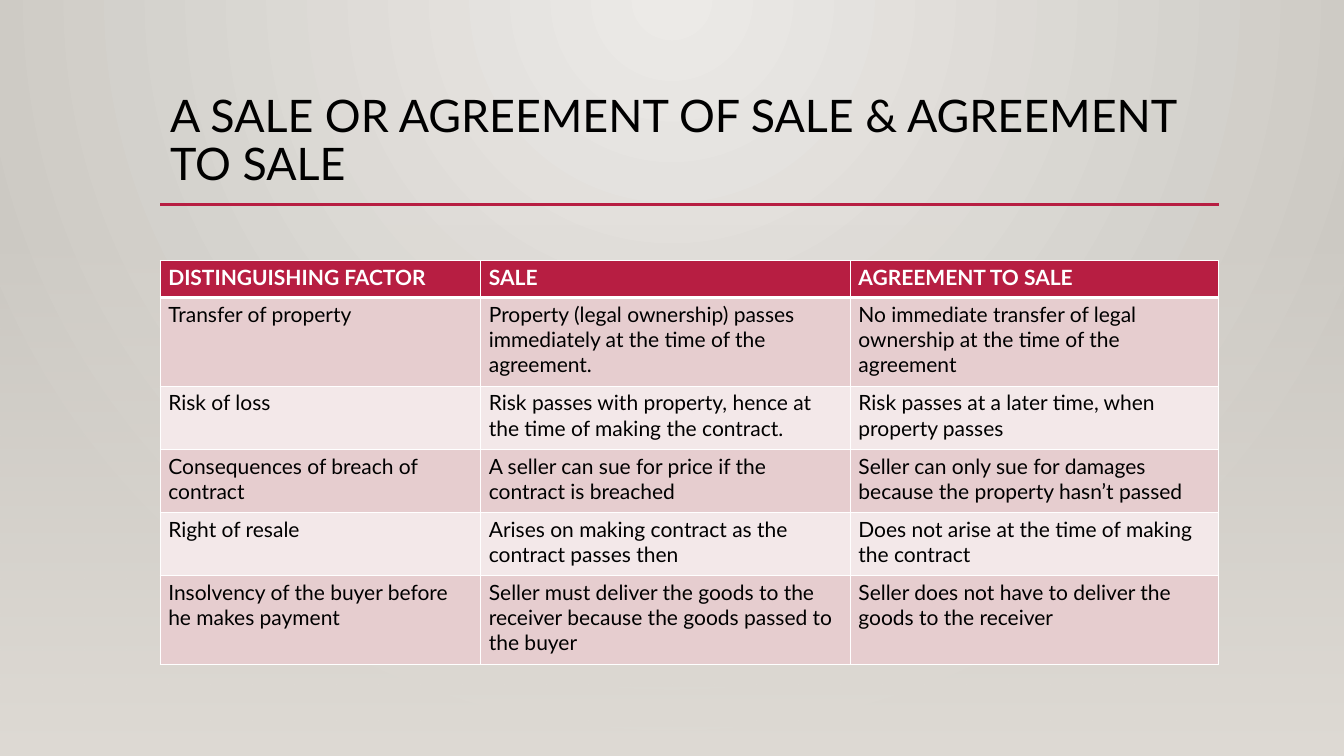
from dataclasses import dataclass
from typing import Any

import lxml.etree
import pptx
import pptx.dml.color
import pptx.enum.shapes
import pptx.enum.text
import pptx.oxml
import pptx.oxml.ns
import pptx.util

Pt = pptx.util.Pt
RGB = pptx.dml.color.RGBColor.from_string
NS = 'xmlns:a="http://schemas.openxmlformats.org/drawingml/2006/main"'


@dataclass(frozen=True)
class Theme:
    font: str = "Lato"
    title_size: float = 32
    table_size: float = 15
    accent: str = "B71E42"
    text: str = "000000"
    white: str = "FFFFFF"
    bands: tuple[str, str] = ("E6CDCF", "F3E8E9")
    glow: str = "ECEAE7"
    edge: str = "CAC7C1"
    floor: str = "DFDBD5"


@dataclass(frozen=True)
class Box:
    x: float
    y: float
    w: float
    h: float

    def pts(self) -> list[int]:
        return [Pt(v) for v in (self.x, self.y, self.w, self.h)]


@dataclass(frozen=True)
class Panel:
    box: Box
    gradient: str


@dataclass(frozen=True)
class Row:
    height: float
    cells: tuple[str, str, str]


T = Theme()
RADIAL = (
    f'<a:gradFill {NS} rotWithShape="1"><a:gsLst>'
    f'<a:gs pos="0"><a:srgbClr val="{T.glow}"/></a:gs>'
    f'<a:gs pos="100000"><a:srgbClr val="{T.edge}"/></a:gs></a:gsLst>'
    '<a:path path="circle"><a:fillToRect l="43000" r="43000" b="100000"/></a:path></a:gradFill>'
)
FADE = (
    f'<a:gradFill {NS} rotWithShape="1"><a:gsLst>'
    f'<a:gs pos="0"><a:srgbClr val="{T.floor}"><a:alpha val="0"/></a:srgbClr></a:gs>'
    f'<a:gs pos="100000"><a:srgbClr val="{T.floor}"/></a:gs></a:gsLst>'
    '<a:lin ang="5400000" scaled="0"/></a:gradFill>'
)

WIDTH, HEIGHT = 960, 540
LEFT, CONTENT_W = 114.5, 756
RULE_Y, RULE_WEIGHT = 146, 2.5
BACKDROP = Panel(Box(0, 0, WIDTH, HEIGHT), RADIAL)
FLOOR = Panel(Box(0, 159, WIDTH, HEIGHT - 159), FADE)
TITLE_BOX = Box(LEFT, 63.4, CONTENT_W, 82.6)
TITLE = "A SALE OR AGREEMENT OF SALE & AGREEMENT TO SALE"
TABLE_Y = 186
COLUMNS = (229, 264, 263)
ROWS = (
    Row(26.5, ("DISTINGUISHING FACTOR", "SALE", "AGREEMENT TO SALE")),
    Row(63.3, ("Transfer of property",
               "Property (legal ownership) passes immediately at the time of the agreement.",
               "No immediate transfer of legal ownership at the time of the agreement")),
    Row(45.2, ("Risk of loss",
               "Risk passes with property, hence at the time of making the contract.",
               "Risk passes at a later time, when property passes")),
    Row(45.2, ("Consequences of breach of contract",
               "A seller can sue for price if the contract is breached",
               "Seller can only sue for damages because the property hasn’t passed")),
    Row(45.2, ("Right of resale",
               "Arises on making contract as the contract passes then",
               "Does not arise at the time of making the contract")),
    Row(63.3, ("Insolvency of the buyer before he makes payment",
               "Seller must deliver the goods to the receiver because the goods passed to the buyer",
               "Seller does not have to deliver the goods to the receiver")),
)
CELL_FORMAT = {"margin_left": Pt(5.75), "margin_right": Pt(5.75),
               "margin_top": Pt(2.9), "margin_bottom": Pt(2.9)}


def apply(target: Any, values: dict[str, Any]) -> None:
    for name, value in values.items():
        setattr(target, name, value)


def write(p: Any, text: str, size: float, color: str, bold: bool = False) -> None:
    r = p.add_run()
    r.text = text
    apply(r.font, {"name": T.font, "size": Pt(size), "bold": bold})
    r.font.color.rgb = RGB(color)


def set_gradient(props: Any, fill: Any, gradient: str) -> None:
    fill.solid()
    old = props.find(pptx.oxml.ns.qn("a:solidFill"))
    props.replace(old, pptx.oxml.parse_xml(gradient))


def add_background(s: Any, gradient: str) -> None:
    fill = s.background.fill
    bg_pr = s.element.find(".//" + pptx.oxml.ns.qn("p:bgPr"))
    set_gradient(bg_pr, fill, gradient)


def add_panel(s: Any, panel: Panel) -> None:
    sp = s.shapes.add_shape(pptx.enum.shapes.MSO_SHAPE.RECTANGLE, *panel.box.pts())
    sp.shadow.inherit = False
    sp.line.fill.background()
    set_gradient(sp.element.spPr, sp.fill, panel.gradient)


def add_title(s: Any) -> None:
    tf = s.shapes.add_textbox(*TITLE_BOX.pts()).text_frame
    apply(tf, {"word_wrap": True, "vertical_anchor": pptx.enum.text.MSO_ANCHOR.TOP})
    p = tf.paragraphs[0]
    p.line_spacing = 0.9
    write(p, TITLE, T.title_size, T.text)


def add_rule(s: Any) -> None:
    ends = [Pt(v) for v in (LEFT, RULE_Y, LEFT + CONTENT_W, RULE_Y)]
    rule = s.shapes.add_connector(pptx.enum.shapes.MSO_CONNECTOR.STRAIGHT, *ends)
    rule.line.width = Pt(RULE_WEIGHT)
    rule.line.color.rgb = RGB(T.accent)
    lxml.etree.SubElement(rule.element.spPr, pptx.oxml.ns.qn("a:effectLst"))


def add_borders(cell: Any, top: float, bottom: float) -> None:
    tc_pr = cell._tc.get_or_add_tcPr()
    for side, weight in {"L": 1, "R": 1, "T": top, "B": bottom}.items():
        tc_pr.append(pptx.oxml.parse_xml(
            f'<a:ln{side} {NS} w="{Pt(weight)}"><a:solidFill>'
            f'<a:srgbClr val="{T.white}"/></a:solidFill></a:ln{side}>'))


def add_table(s: Any) -> None:
    box = Box(LEFT, TABLE_Y, CONTENT_W, sum(row.height for row in ROWS))
    table = s.shapes.add_table(len(ROWS), len(COLUMNS), *box.pts()).table
    table.horz_banding = False
    for column, width in zip(table.columns, COLUMNS):
        column.width = Pt(width)
    for i, row in enumerate(ROWS):
        table.rows[i].height = Pt(row.height)
        header = i == 0
        for j, text in enumerate(row.cells):
            cell = table.cell(i, j)
            apply(cell, CELL_FORMAT)
            add_borders(cell, top=3 if i == 1 else 1, bottom=3 if header else 1)
            cell.fill.solid()
            cell.fill.fore_color.rgb = RGB(T.accent if header else T.bands[(i - 1) % 2])
            write(cell.text_frame.paragraphs[0], text, T.table_size,
                  T.white if header else T.text, header)


def main() -> None:
    prs = pptx.Presentation()
    apply(prs, {"slide_width": Pt(WIDTH), "slide_height": Pt(HEIGHT)})
    s = prs.slides.add_slide(prs.slide_layouts[6])
    add_background(s, RADIAL)
    add_panel(s, BACKDROP)
    add_title(s)
    add_rule(s)
    add_panel(s, FLOOR)
    add_table(s)
    prs.save("out.pptx")


if __name__ == "__main__":
    main()
